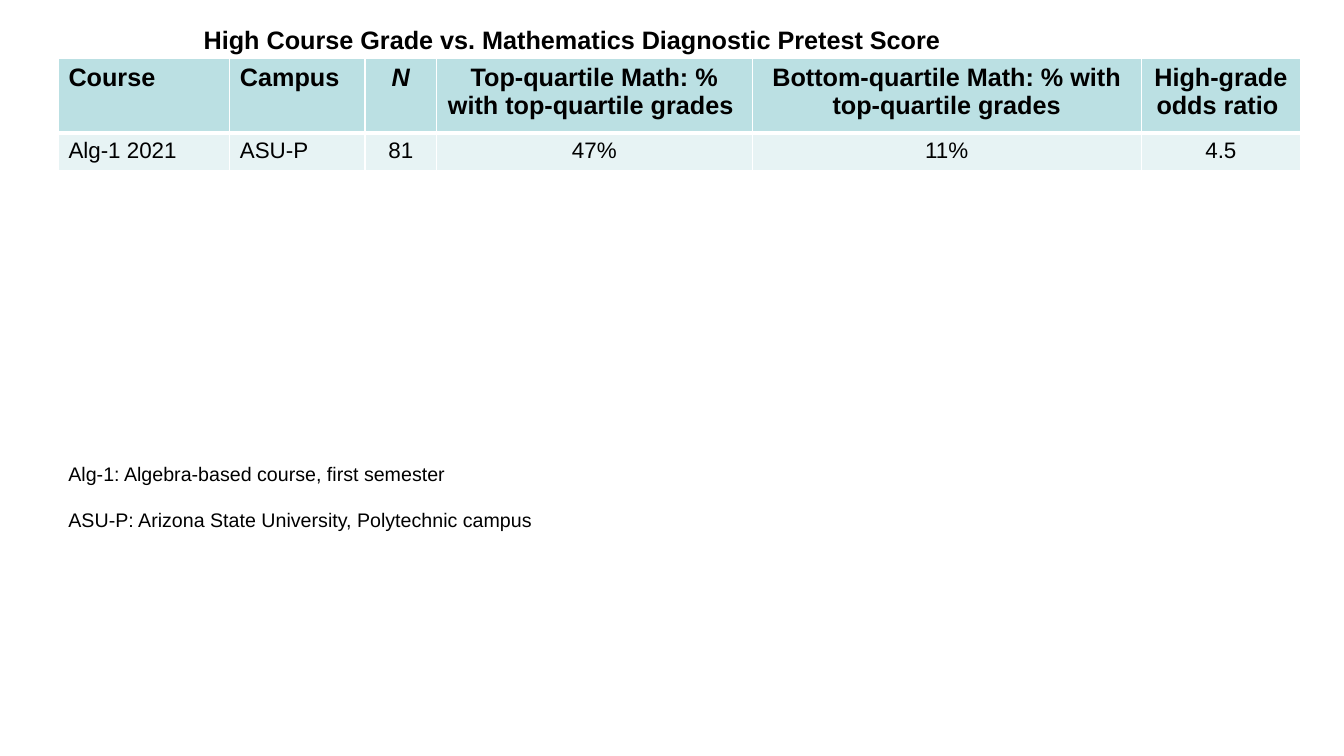
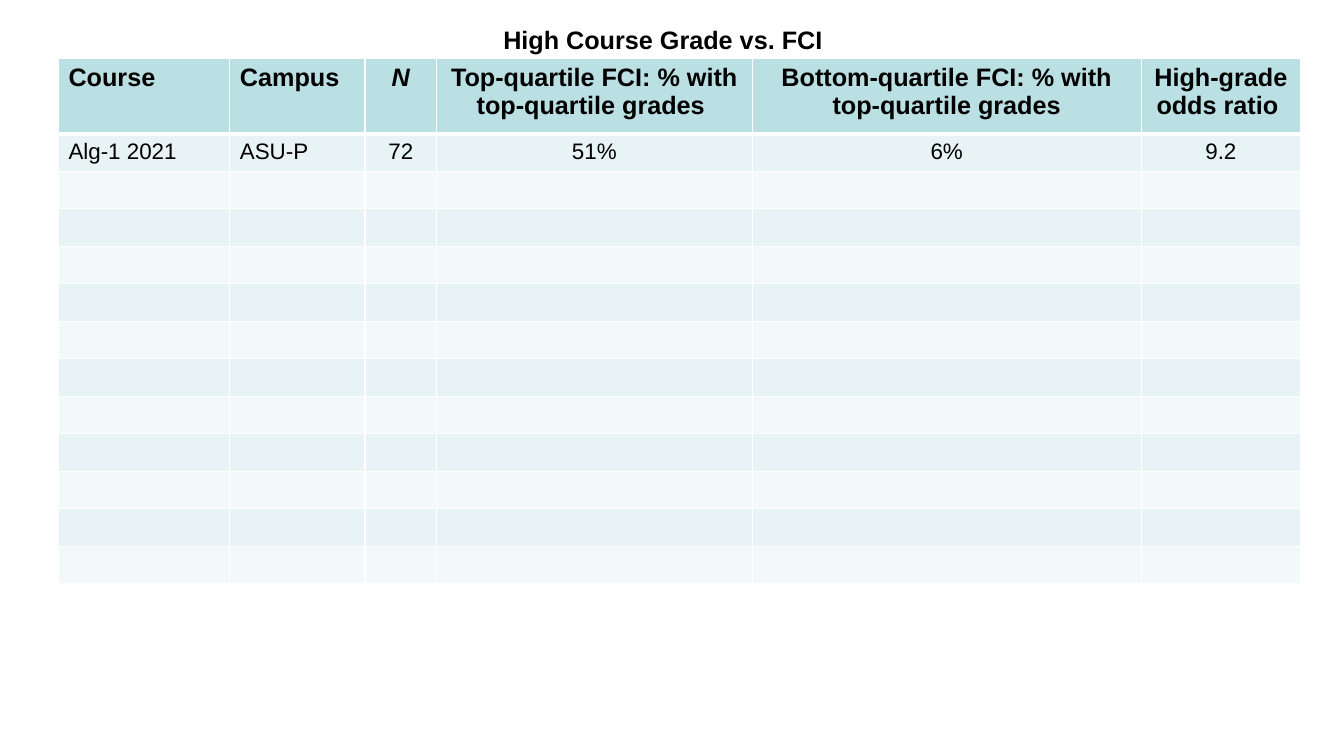
from lxml.etree import SubElement
from pptx import Presentation
from pptx.dml.color import RGBColor
from pptx.enum.text import MSO_ANCHOR, MSO_AUTO_SIZE, PP_ALIGN
from pptx.oxml.ns import qn
from pptx.util import Pt

EMU_PER_PX = 9144
COLORS = {
    "text": "000000",
    "header": "BBE0E3",
    "odd_row": "E7F3F4",
    "even_row": "F3F9FA",
    "border": "FFFFFF",
}
FONT = "Arial"
TABLE_LEFT, TABLE_TOP = 58, 58
COLUMN_WIDTHS = [170, 134, 71, 313, 386, 158]
ROW_HEIGHT = 37
TEXT_COLUMNS = 2
SAMPLE_SIZE_COLUMN = 2


def px(length):
    return length * EMU_PER_PX


def headings(test):
    return [
        "Course",
        "Campus",
        "N",
        f"Top-quartile {test}: % with top-quartile grades ",
        f"Bottom-quartile {test}: % with top-quartile grades",
        "High-grade odds ratio ",
    ]


class GradeDeck:
    def __init__(self):
        self.deck = Presentation()
        self.deck.slide_width, self.deck.slide_height = px(1333), px(750)
        self.page = None

    def add_page(self, title, align):
        self.page = self.deck.slides.add_slide(self.deck.slide_layouts[5])
        box = self.page.shapes.title
        box.left, box.top, box.width, box.height = map(px, (192, 19, 931, 40))
        frame = box.text_frame
        frame.text = title
        frame.auto_size = MSO_AUTO_SIZE.NONE
        frame.vertical_anchor = MSO_ANCHOR.TOP
        self.format_paragraph(frame.paragraphs[0], 18, align, bold=True)

    def format_paragraph(self, paragraph, size, align=PP_ALIGN.LEFT, bold=False, italic=False):
        paragraph.alignment = align
        for span in paragraph.runs:
            font = span.font
            font.name, font.size = FONT, Pt(size)
            font.bold, font.italic = bold, italic
            font.color.rgb = RGBColor.from_string(COLORS["text"])
        if not paragraph.runs:
            # An empty cell needs its own text size to keep the row height.
            SubElement(paragraph._p, qn("a:endParaRPr"), sz=str(size * 100))

    def add_borders(self, cell, top, bottom):
        """Draw the four cell borders; top and bottom are widths in points."""
        properties = cell._tc.get_or_add_tcPr()
        for side, width in (("L", 1), ("R", 1), ("T", top), ("B", bottom)):
            line = SubElement(properties, qn(f"a:ln{side}"), w=str(Pt(width)))
            fill = SubElement(line, qn("a:solidFill"))
            SubElement(fill, qn("a:srgbClr"), val=COLORS["border"])

    def add_table(self, rows, header_height):
        """Add a table whose first row is the header; short rows are padded with empty cells."""
        height = header_height + ROW_HEIGHT * (len(rows) - 1)
        table = self.page.shapes.add_table(
            len(rows), len(COLUMN_WIDTHS), px(TABLE_LEFT), px(TABLE_TOP),
            px(sum(COLUMN_WIDTHS)), px(height),
        ).table
        table.horz_banding = False
        for column, width in zip(table.columns, COLUMN_WIDTHS):
            column.width = px(width)
        for row_index, values in enumerate(rows):
            table.rows[row_index].height = px(ROW_HEIGHT if row_index else header_height)
            for column_index in range(len(COLUMN_WIDTHS)):
                text = values[column_index] if values else ""
                self.fill_cell(table.cell(row_index, column_index), text, row_index, column_index)

    def fill_cell(self, cell, text, row_index, column_index):
        is_header = row_index == 0
        self.add_borders(cell, top=3 if row_index == 1 else 1, bottom=3 if is_header else 1)
        band = "header" if is_header else "odd_row" if row_index % 2 else "even_row"
        cell.fill.solid()
        cell.fill.fore_color.rgb = RGBColor.from_string(COLORS[band])
        cell.text_frame.text = text
        self.format_paragraph(
            cell.text_frame.paragraphs[0],
            size=18 if is_header else 16,
            align=PP_ALIGN.LEFT if column_index < TEXT_COLUMNS else PP_ALIGN.CENTER,
            bold=is_header,
            italic=is_header and column_index == SAMPLE_SIZE_COLUMN,
        )

    def add_notes_box(self, lines, left, top, width, height):
        box = self.page.shapes.add_textbox(*map(px, (left, top, width, height)))
        frame = box.text_frame
        frame.word_wrap = True
        frame.text = "\n".join(lines)
        for paragraph in frame.paragraphs:
            self.format_paragraph(paragraph, 14)
            paragraph.space_after = Pt(16)


def main():
    grades = GradeDeck()

    grades.add_page("High Course Grade vs. Mathematics Diagnostic Pretest Score", PP_ALIGN.LEFT)
    grades.add_table(
        [headings("Math"), ["Alg-1 2021", "ASU-P", "81", "47%", "11%", "4.5"]],
        header_height=74,
    )
    grades.add_notes_box(
        [
            "Alg-1: Algebra-based course, first semester",
            "ASU-P: Arizona State University, Polytechnic campus",
        ],
        TABLE_LEFT, 453, 625, 82,
    )

    grades.add_page("High Course Grade vs. FCI", PP_ALIGN.CENTER)
    empty_rows = [[]] * 11
    grades.add_table(
        [headings("FCI"), ["Alg-1 2021", "ASU-P", "72", "51%", "6%", "9.2"], *empty_rows],
        header_height=75,
    )

    grades.deck.save("out.pptx")


if __name__ == "__main__":
    main()
